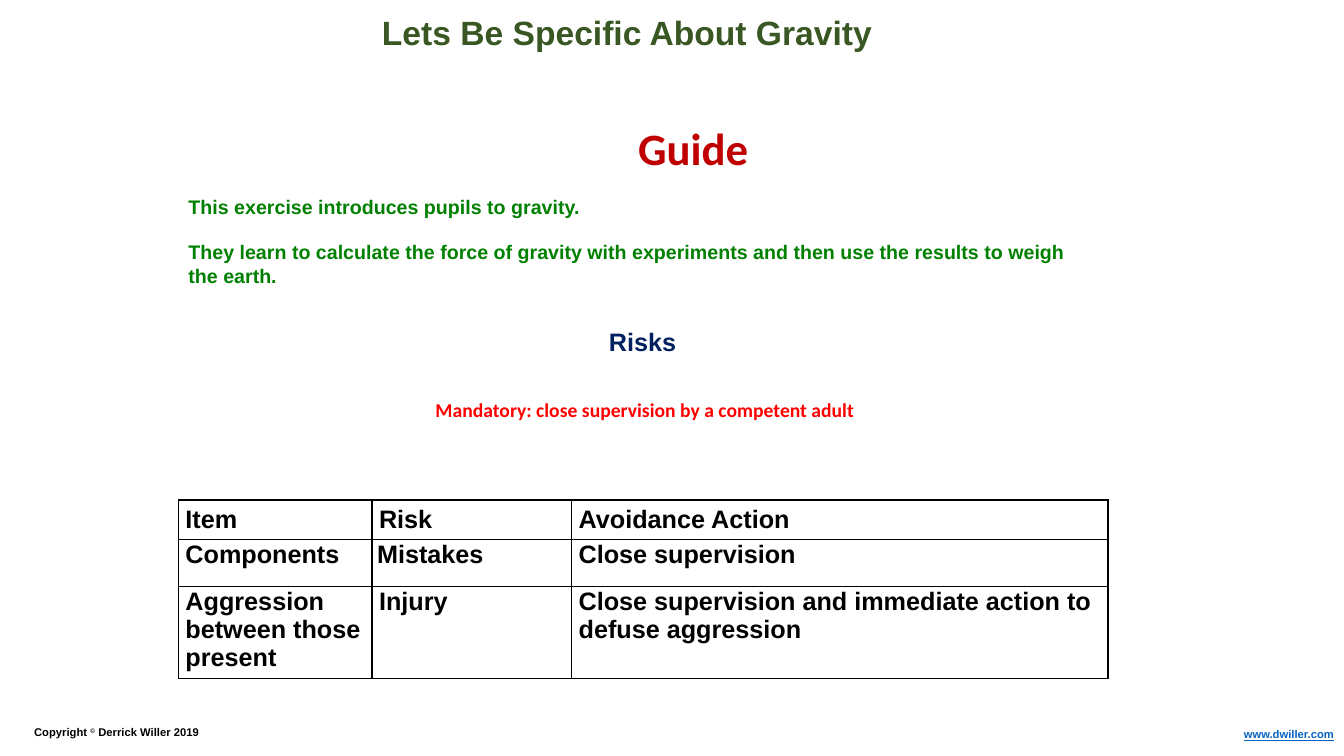
from lxml.etree import SubElement
from pptx import Presentation
from pptx.dml.color import RGBColor
from pptx.enum.text import MSO_ANCHOR, PP_ALIGN
from pptx.oxml.ns import qn
from pptx.util import Inches, Pt

HEADS = ["Item", "Risk", "Avoidance Action"]
RISKS = [
    ["Components", "Mistakes", "Close supervision"],
    ["Aggression between those present", "Injury",
     "Close supervision and immediate action to defuse aggression"],
]
COLS = [1.92, 1.98, 5.32]
ROWS = [0.39, 0.47, 0.9]


def paint(color, hue):
    color.rgb = RGBColor.from_string(hue)


def style(par, size, hue, face="Arial"):
    for run in par.runs:
        font = run.font
        font.name, font.size, font.bold = face, Pt(size), True
        paint(font.color if font.fill.type else solid(font.fill), hue)


def solid(fill):
    fill.solid()
    return fill.fore_color


def add_text(slide, box, lines, size, hue, face="Arial", wrap=False, gap=0):
    """Add bold lines at box, gap points apart, and return the text frame."""
    frame = slide.shapes.add_textbox(*map(Inches, box)).text_frame
    frame.word_wrap = wrap
    frame.text = "\n".join(lines)
    for i, par in enumerate(frame.paragraphs):
        par.space_before = Pt(gap if i else 0)
        style(par, size, hue, face)
    return frame


def add_footer(slide):
    frame = add_text(slide, (0.24, 7.15, 5.65, 0.24), ["Copyright "],
                     8, "000000", wrap=True)
    par = frame.paragraphs[0]
    sign = par.add_run()
    sign.text = "©"
    par.add_run().text = " Derrick Willer 2019"
    style(par, 8, "000000")
    sign.font._element.set("baseline", "30000")

    link = add_text(slide, (11.99, 7.17, 1.34, 0.24), ["www.dwiller.com"],
                    8, "0563C1", wrap=True).paragraphs[0]
    link.alignment = PP_ALIGN.RIGHT
    link.runs[0].font.underline = True


def add_border(cell, hue="000000"):
    props = cell._tc.get_or_add_tcPr()
    for i, side in enumerate(("a:lnL", "a:lnR", "a:lnT", "a:lnB")):
        line = props.makeelement(qn(side), {"w": str(Pt(1))})
        fill = SubElement(line, qn("a:solidFill"))
        SubElement(fill, qn("a:srgbClr"), val=hue)
        props.insert(i, line)


def fill_cell(cell, text, head):
    cell.text = text
    cell.fill.background()
    cell.margin_left = cell.margin_right = Inches(0.07)
    cell.margin_top, cell.margin_bottom = Inches(0.01), 0
    cell.vertical_anchor = MSO_ANCHOR.MIDDLE if head else MSO_ANCHOR.TOP
    style(cell.text_frame.paragraphs[0], 18, "000000")
    add_border(cell)


def add_risks(slide):
    data = [HEADS] + RISKS
    box = map(Inches, (1.77, 4.96, sum(COLS), sum(ROWS)))
    table = slide.shapes.add_table(len(ROWS), len(COLS), *box).table
    table.first_row = table.horz_banding = False
    for col, width in zip(table.columns, COLS):
        col.width = Inches(width)
    for r, (row, height) in enumerate(zip(table.rows, ROWS)):
        row.height = Inches(height)
        for cell, text in zip(row.cells, data[r]):
            fill_cell(cell, text, r == 0)
    table.cell(1, 1).margin_left = Inches(0.05)


def main():
    deck = Presentation()
    deck.slide_width, deck.slide_height = Inches(13.33), Inches(7.5)
    slide = deck.slides.add_slide(deck.slide_layouts[6])
    add_text(slide, (3.69, 0.07, 5.11, 0.5),
             ["Lets Be Specific About Gravity"], 24, "385723")
    add_footer(slide)
    add_text(slide, (6.23, 1.15, 1.47, 0.64), ["Guide"],
             32, "C00000", "Calibri")
    add_text(slide, (1.77, 1.88, 8.91, 1.04),
             ["This exercise introduces pupils to gravity.",
              "They learn to calculate the force of gravity with experiments "
              "and then use the results to weigh the earth."],
             14, "008000", wrap=True, gap=16)
    add_text(slide, (5.94, 3.19, 0.88, 0.4), ["Risks"], 18, "002060")
    add_risks(slide)
    add_text(slide, (4.22, 3.9, 4.38, 0.34),
             ["Mandatory: close supervision by a competent adult"],
             14, "FF0000", "Calibri")
    deck.save("out.pptx")


if __name__ == "__main__":
    main()
